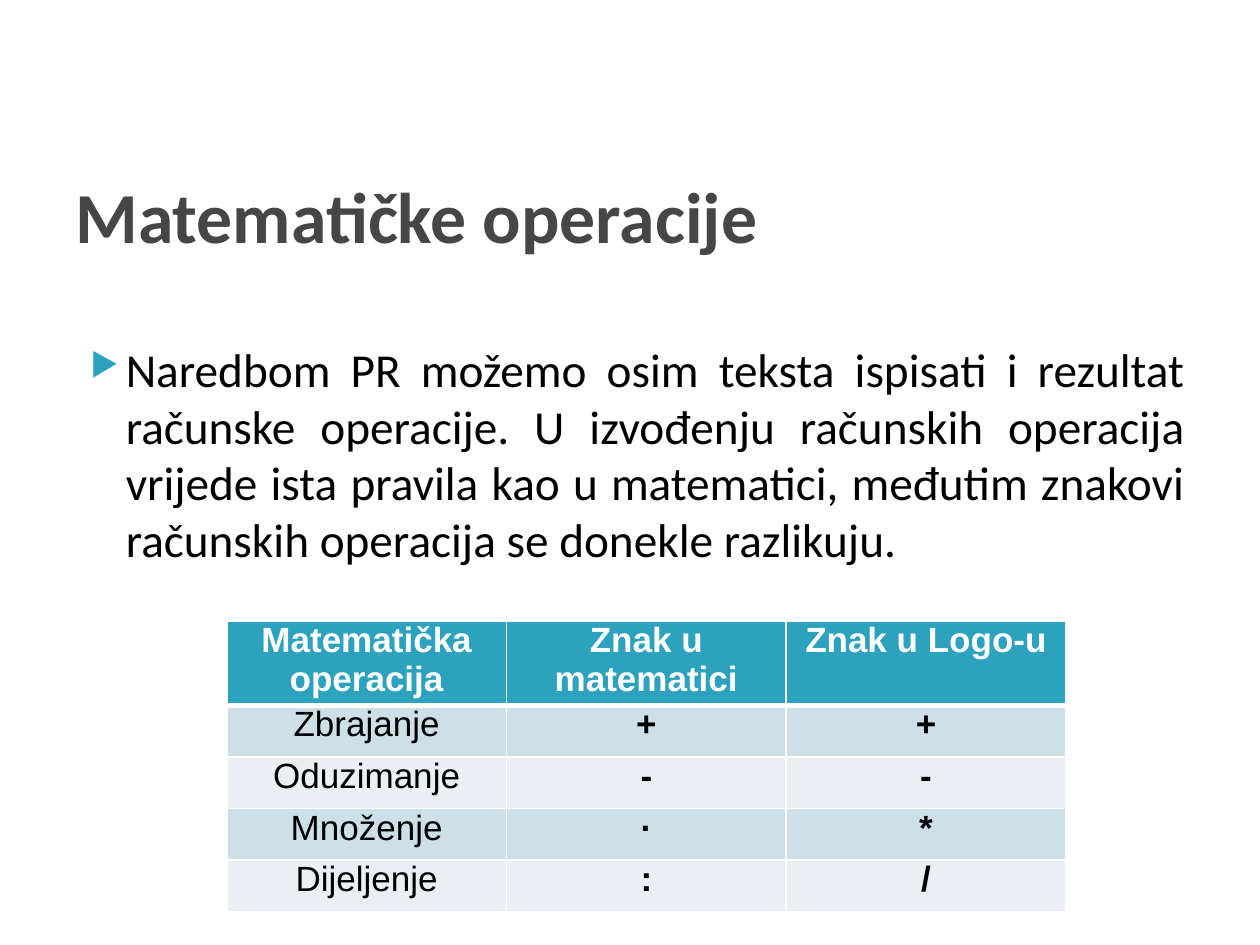
from dataclasses import dataclass

from lxml import etree
from pptx import Presentation
from pptx import util as u
from pptx.dml.color import RGBColor
from pptx.enum import text as t
from pptx.oxml.ns import qn


@dataclass(frozen=True)
class Theme:
    teal: str = "2DA2BF"
    gray: str = "464646"
    black: str = "000000"
    white: str = "FFFFFF"
    bands: tuple = ("CDE0E8", "E8F0F4")
    sans: str = "Calibri"
    grid: str = "Arial"
    title: int = 41
    body: int = 27
    cell: int = 20


THEME = Theme()
HEAD = ("Matematička operacija", "Znak u matematici", "Znak u Logo-u")
ROWS = (
    ("Zbrajanje", "+", "+"),
    ("Oduzimanje", "-", "-"),
    ("Množenje", "·", "*"),
    ("Dijeljenje", ":", "/"),
)
BODY = ("Naredbom PR možemo osim teksta ispisati i rezultat računske operacije. "
        "U izvođenju računskih operacija vrijede ista pravila kao u matematici, "
        "međutim znakovi računskih operacija se donekle razlikuju.")


def write(frame, words, *, font, size, color, bold=False,
          align=t.PP_ALIGN.LEFT):
    """Fill a text frame with one formatted paragraph."""
    para = frame.paragraphs[0]
    para.alignment = align
    run = para.add_run()
    run.text = words
    run.font.name = font
    run.font.size = u.Pt(size)
    run.font.bold = bold
    run.font.color.rgb = RGBColor.from_string(color)
    return para


def add_box(slide, left, top, width, height, anchor=t.MSO_ANCHOR.TOP):
    box = slide.shapes.add_textbox(*map(u.Inches, (left, top, width, height)))
    frame = box.text_frame
    frame.word_wrap = True
    frame.vertical_anchor = anchor
    return frame


def add_bullet(para, sign, color, scale):
    """Give a paragraph a hanging, coloured bullet."""
    props = para._p.get_or_add_pPr()
    props.set("marL", str(u.Inches(0.4)))
    props.set("indent", str(u.Inches(-0.28)))
    tint = etree.SubElement(props, qn("a:buClr"))
    etree.SubElement(tint, qn("a:srgbClr"), val=color)
    etree.SubElement(props, qn("a:buSzPct"), val=str(scale * 1000))
    etree.SubElement(props, qn("a:buChar"), char=sign)


def add_edges(cell, widths):
    """Draw white cell borders; widths are in points by side."""
    props = cell._tc.get_or_add_tcPr()
    for spot, (side, width) in enumerate(widths.items()):
        line = etree.Element(qn(f"a:ln{side}"), w=str(u.Pt(width)))
        fill = etree.SubElement(line, qn("a:solidFill"))
        etree.SubElement(fill, qn("a:srgbClr"), val=THEME.white)
        props.insert(spot, line)


def fill_cell(cell, words, fill, color, bold, edges):
    cell.margin_left = cell.margin_right = u.Inches(0.07)
    cell.margin_top = cell.margin_bottom = 0
    cell.fill.solid()
    cell.fill.fore_color.rgb = RGBColor.from_string(fill)
    write(cell.text_frame, words, font=THEME.grid, size=THEME.cell,
          color=color, bold=bold, align=t.PP_ALIGN.CENTER)
    add_edges(cell, edges)


def add_grid(slide, left, top, wide, high):
    count = len(ROWS) + 1
    table = slide.shapes.add_table(
        count, len(HEAD), u.Inches(left), u.Inches(top),
        u.Inches(wide * len(HEAD)), u.Inches(high * count)).table
    for col in table.columns:
        col.width = u.Inches(wide)
    for row in table.rows:
        row.height = u.Inches(high)

    for r, row in enumerate((HEAD, *ROWS)):
        head = r == 0
        fill = THEME.teal if head else THEME.bands[(r - 1) % 2]
        color = THEME.white if head else THEME.black
        # A thick rule parts the header from the rows
        edges = {"L": 1, "R": 1, "T": 3 if r == 1 else 1, "B": 3 if head else 1}
        for c, words in enumerate(row):
            fill_cell(table.cell(r, c), words, fill, color, head or c > 0, edges)


def main():
    deck = Presentation()
    deck.slide_width, deck.slide_height = u.Inches(10), u.Inches(7.5)
    slide = deck.slides.add_slide(deck.slide_layouts[6])

    # Body text
    para = write(add_box(slide, 0.5, 2.65, 9, 1.9), BODY, font=THEME.sans,
                 size=THEME.body, color=THEME.black, align=t.PP_ALIGN.JUSTIFY)
    add_bullet(para, "▶", THEME.teal, 68)

    # Title
    write(add_box(slide, 0.5, 1.08, 9, 1.25, t.MSO_ANCHOR.MIDDLE),
          "Matematičke operacije", font=THEME.sans, size=THEME.title,
          color=THEME.gray, bold=True)

    # Table of signs
    add_grid(slide, 1.8, 4.93, 2.22, 0.41)

    deck.save("out.pptx")


if __name__ == "__main__":
    main()
